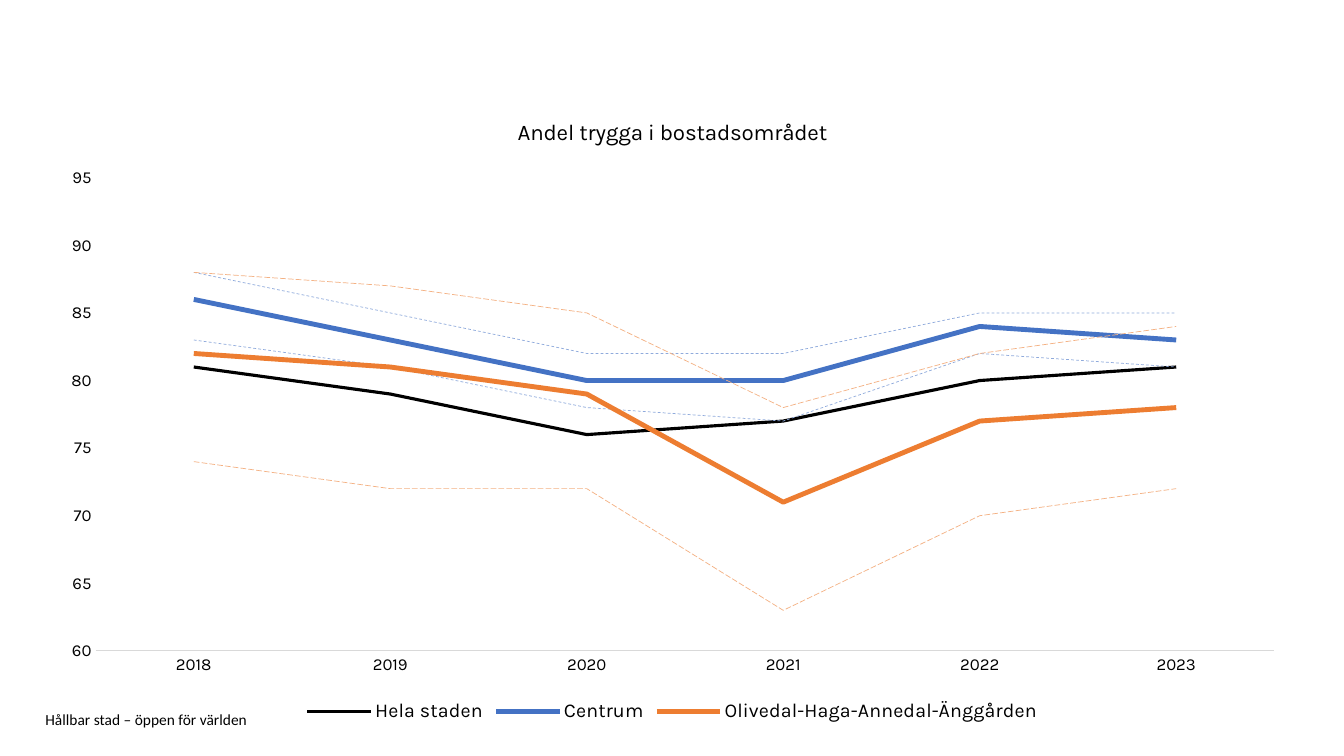
"""Build a slide with a line chart of perceived safety by district."""
from dataclasses import dataclass

import pptx
import pptx.chart.data
import pptx.dml.color
import pptx.enum.chart
import pptx.enum.dml
import pptx.enum.text
import pptx.oxml
import pptx.oxml.ns
import pptx.util

Inches = pptx.util.Inches


@dataclass(frozen=True)
class Theme:
    ink: str = "000000"
    axis: str = "D9D9D9"
    blue: str = "4472C4"
    pale: str = "8FAADC"
    orange: str = "ED7D31"
    peach: str = "F4B183"
    face: str = "Karla"
    plain: str = "Calibri"
    title: int = 16
    legend: int = 14
    label: int = 12
    foot: int = 11
    thin: float = 0.5
    hair: float = 0.75
    mid: float = 2.25
    bold: float = 3.5


THEME = Theme()
DASH = pptx.enum.dml.MSO_LINE.DASH
LONG = pptx.enum.dml.MSO_LINE.LONG_DASH
YEARS = ["2018", "2019", "2020", "2021", "2022", "2023"]
LINES = [
    ("Hela staden", (81, 79, 76, 77, 80, 81), THEME.ink, THEME.mid, None),
    ("Centrum", (86, 83, 80, 80, 84, 83), THEME.blue, THEME.bold, None),
    ("Series 3", (83, 81, 78, 77, 82, 81), THEME.pale, THEME.thin, DASH),
    ("Series 4", (88, 85, 82, 82, 85, 85), THEME.pale, THEME.thin, DASH),
    ("Olivedal-Haga-Annedal-Änggården", (82, 81, 79, 71, 77, 78),
     THEME.orange, THEME.bold, None),
    ("Series 6", (74, 72, 72, 63, 70, 72), THEME.peach, THEME.thin, LONG),
    ("Series 7", (88, 87, 85, 78, 82, 84), THEME.peach, THEME.thin, LONG),
]


def style(font, size, face=THEME.face):
    font.name = face
    font.size = pptx.util.Pt(size)
    font.bold = False
    font.color.rgb = pptx.dml.color.RGBColor.from_string(THEME.ink)


def stroke(line, color, width, dash=None):
    line.color.rgb = pptx.dml.color.RGBColor.from_string(color)
    line.width = pptx.util.Pt(width)
    if dash:
        line.dash_style = dash


def add_foot(slide, text):
    box = slide.shapes.add_textbox(
        Inches(0.45), Inches(7.06), Inches(9.45), Inches(0.16))
    frame = box.text_frame
    frame.text = text
    frame.word_wrap = True
    frame.vertical_anchor = pptx.enum.text.MSO_ANCHOR.MIDDLE
    frame.margin_left = frame.margin_right = 0
    frame.margin_top = frame.margin_bottom = 0
    style(frame.paragraphs[0].runs[0].font, THEME.foot, THEME.plain)


def set_axes(chart):
    none = pptx.enum.chart.XL_TICK_MARK.NONE
    for axis in (chart.category_axis, chart.value_axis):
        axis.major_tick_mark = axis.minor_tick_mark = none
        axis.has_major_gridlines = False
        style(axis.tick_labels.font, THEME.label)
    stroke(chart.category_axis.format.line, THEME.axis, THEME.hair)
    value = chart.value_axis
    value.minimum_scale, value.maximum_scale = 60, 95
    value.major_unit = 5
    value.format.line.fill.background()
    value.tick_labels.number_format = "0"
    value.tick_labels.number_format_is_linked = False


def set_legend(chart):
    chart.has_legend = True
    legend = chart.legend
    legend.position = pptx.enum.chart.XL_LEGEND_POSITION.BOTTOM
    legend.include_in_layout = False
    style(legend.font, THEME.legend)
    node = chart.element.xpath("c:chart/c:legend")[0]
    hidden = [i for i, line in enumerate(LINES) if line[4]]
    for place, index in enumerate(hidden, 1):
        node.insert(place, pptx.oxml.parse_xml(
            f'<c:legendEntry {pptx.oxml.ns.nsdecls("c")}>'
            f'<c:idx val="{index}"/><c:delete val="1"/></c:legendEntry>'))


def set_plot(chart, **sides):
    area = chart.element.xpath("c:chart/c:plotArea")[0]
    for old in area.xpath("c:layout"):
        area.remove(old)
    parts = "".join(f'<c:{k} val="{v}"/>' for k, v in sides.items())
    area.insert(0, pptx.oxml.parse_xml(
        f'<c:layout {pptx.oxml.ns.nsdecls("c")}><c:manualLayout>'
        '<c:layoutTarget val="inner"/><c:xMode val="edge"/>'
        f'<c:yMode val="edge"/>{parts}</c:manualLayout></c:layout>'))


def add_graph(slide, title):
    data = pptx.chart.data.CategoryChartData(number_format="0")
    data.categories = YEARS
    for name, values, *_ in LINES:
        data.add_series(name, values)
    chart = slide.shapes.add_chart(
        pptx.enum.chart.XL_CHART_TYPE.LINE, Inches(0.45), Inches(0.95),
        Inches(12.44), Inches(6.26), data).chart
    style(chart.font, THEME.label)
    chart.has_title = True
    frame = chart.chart_title.text_frame
    frame.text = title
    style(frame.paragraphs[0].runs[0].font, THEME.title)
    chart.plots[0].vary_by_categories = False
    for series, (_, _, color, width, dash) in zip(chart.series, LINES):
        series.smooth = False
        stroke(series.format.line, color, width, dash)
    set_axes(chart)
    set_legend(chart)
    set_plot(chart, x=0.04, y=0.13, w=0.94, h=0.75)


def main():
    deck = pptx.Presentation()
    deck.slide_width, deck.slide_height = Inches(13.33), Inches(7.5)
    slide = deck.slides.add_slide(deck.slide_layouts[6])
    add_foot(slide, "Hållbar stad – öppen för världen")
    add_graph(slide, "Andel trygga i bostadsområdet")
    deck.save("out.pptx")


if __name__ == "__main__":
    main()
